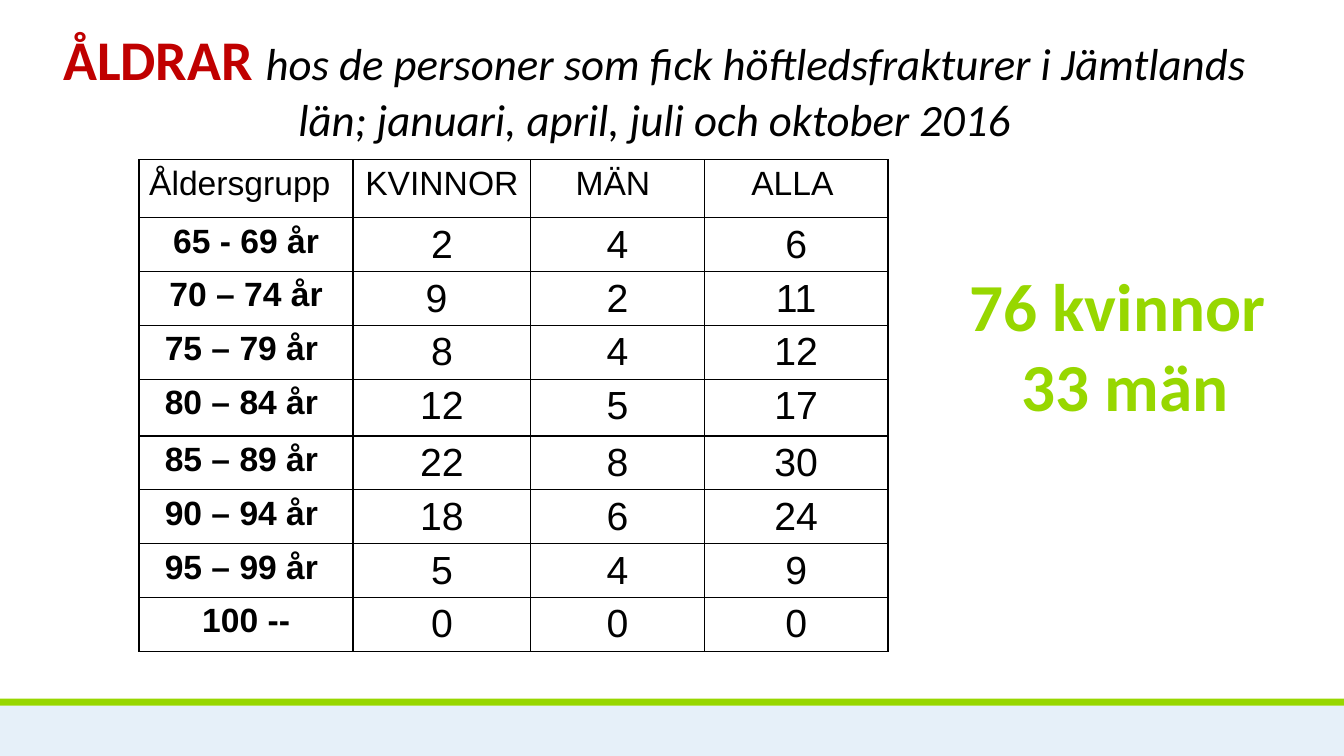
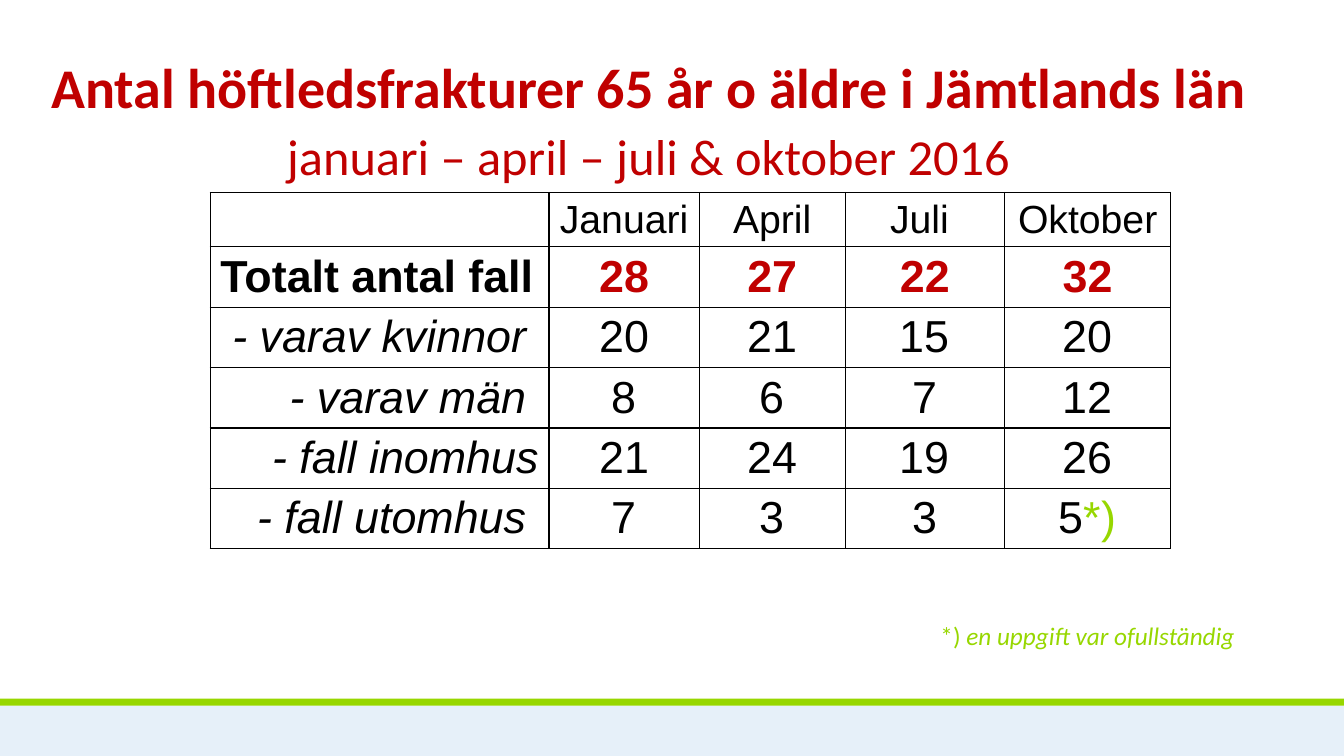
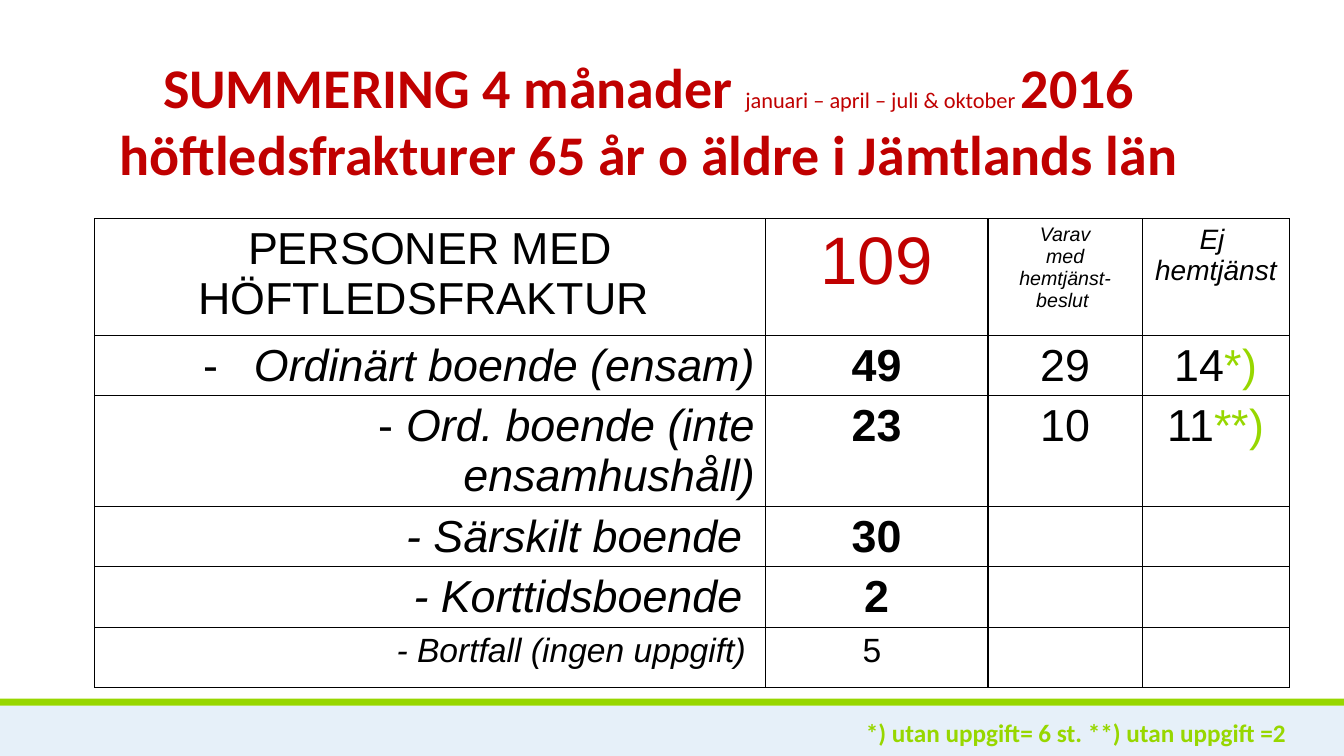
from dataclasses import dataclass, field

from lxml import etree
from pptx import Presentation
from pptx.dml.color import RGBColor
from pptx.enum.shapes import MSO_SHAPE as Shape
from pptx.enum.text import MSO_ANCHOR as Anchor, MSO_AUTO_SIZE as AutoSize, PP_ALIGN as Align
from pptx.oxml.ns import qn
from pptx.util import Inches, Pt


@dataclass(frozen=True)
class Theme:
    black: str = "000000"
    red: str = "C00000"
    green: str = "97D700"
    pale: str = "E6F0F9"
    title_font: str = "Calibri"
    table_font: str = "Arial"
    huge: int = 48
    title: int = 40
    subtitle: int = 36
    large: int = 32
    medium: int = 28
    small: int = 24
    label: int = 20
    note: int = 18
    minor: int = 16
    tiny: int = 14
    border: float = 1


T = Theme()
WIDTH, HEIGHT = Inches(13.33), Inches(7.5)


@dataclass
class Cell:
    paragraphs: tuple = ()
    align: Align = Align.CENTER
    bullet: bool = False
    fmt: dict = field(default_factory=dict)


def cell(*paragraphs, align=Align.CENTER, bullet=False, **fmt):
    return Cell(paragraphs, align, bullet, fmt)


def place(left, top, width, height):
    """Turn percentages of the slide into lengths."""
    return (int(WIDTH * left / 100), int(HEIGHT * top / 100),
            int(WIDTH * width / 100), int(HEIGHT * height / 100))


# Text
def write(p, text, size=T.note, color=T.black, bold=False, italic=False, font=T.title_font):
    r = p.add_run()
    r.text = text
    r.font.name, r.font.size = font, Pt(size)
    r.font.bold, r.font.italic = bold, italic
    r.font.color.rgb = RGBColor.from_string(color)


def write_all(tf, paragraphs, align, **base):
    """A paragraph is a text or a list of runs; a run is a text or (text, format)."""
    for i, runs in enumerate(paragraphs):
        p = tf.paragraphs[0] if i == 0 else tf.add_paragraph()
        p.alignment = align
        for run in [runs] if isinstance(runs, str) else runs:
            text, fmt = (run, {}) if isinstance(run, str) else run
            write(p, text, **{**base, **fmt})


def add_dash_bullet(p):
    pPr = p._p.get_or_add_pPr()
    pPr.set("marL", str(Inches(0.5)))
    pPr.set("indent", str(-Inches(0.5)))
    color = etree.SubElement(pPr, qn("a:buClr"))
    etree.SubElement(color, qn("a:srgbClr"), val=T.black)
    etree.SubElement(pPr, qn("a:buFont"), typeface=T.table_font)
    etree.SubElement(pPr, qn("a:buChar"), char="-")


# Parts of a slide
def add_bands(slide, layout):
    """Draw the footer bands and move them to the shared layout."""
    bands = ((place(0, 93.33, 100, 6.67), T.pale), (place(0, 92.4, 100, 0.93), T.green))
    for i, (box, color) in enumerate(bands):
        sp = slide.shapes.add_shape(Shape.RECTANGLE, *box)
        sp.shadow.inherit = False
        sp.fill.solid()
        sp.fill.fore_color.rgb = RGBColor.from_string(color)
        sp.line.fill.background()
        sp.element.nvSpPr.cNvPr.set("id", str(100 + i))
        layout.shapes.element.insert(2 + i, sp.element)


def add_title(slide, paragraphs, top=6.27):
    sp = slide.shapes.title
    sp.left, sp.top, sp.width, sp.height = place(1.58, top, 94.3, 19.33)
    tf = sp.text_frame
    tf.word_wrap, tf.auto_size, tf.vertical_anchor = True, AutoSize.NONE, Anchor.TOP
    write_all(tf, paragraphs, Align.CENTER, size=T.title, color=T.red, bold=True)


def add_note(slide, box, paragraphs, align=Align.LEFT, **fmt):
    tf = slide.shapes.add_textbox(*box).text_frame
    tf.word_wrap = True
    write_all(tf, paragraphs, align, color=T.green, **fmt)


def draw_borders(tc):
    tcPr = tc._tc.get_or_add_tcPr()
    for i, side in enumerate(("a:lnL", "a:lnR", "a:lnT", "a:lnB")):
        ln = etree.Element(qn(side), w=str(Pt(T.border)))
        fill = etree.SubElement(ln, qn("a:solidFill"))
        etree.SubElement(fill, qn("a:srgbClr"), val=T.black)
        tcPr.insert(i, ln)


def add_grid(slide, box, columns, rows, cells, size):
    """Share the box among the columns and rows by weight, then fill the cells."""
    table = slide.shapes.add_table(len(rows), len(columns), *box).table
    table.first_row = table.horz_banding = False
    for tracks, weights, name, total in ((table.columns, columns, "width", box[2]),
                                         (table.rows, rows, "height", box[3])):
        for track, weight in zip(tracks, weights):
            setattr(track, name, int(total * weight / sum(weights)))
    for r, line in enumerate(cells):
        for c, content in enumerate(line):
            tc = table.cell(r, c)
            tc.fill.background()
            draw_borders(tc)
            if content.bullet:
                add_dash_bullet(tc.text_frame.paragraphs[0])
            write_all(tc.text_frame, content.paragraphs, content.align,
                      **{"size": size, "font": T.table_font, **content.fmt})


# Slides
def build_ages(slide):
    add_title(slide, [["ÅLDRAR ", (
        "hos de personer som fick höftledsfrakturer i Jämtlands län; "
        "januari, april, juli och oktober 2016",
        dict(size=T.large, color=T.black, bold=False, italic=True))]], top=2.53)
    ages = (("65 - 69 år", "2", "4", "6"),
            ("70 – 74 år", "9 ", "2", "11"),
            ("75 – 79 år ", "8", "4", "12"),
            ("80 – 84 år ", "12", "5", "17"),
            ("85 – 89 år ", "22", "8", "30"),
            ("90 – 94 år ", "18", "6", "24"),
            ("95 – 99 år ", "5", "4", "9"),
            ("100 --", "0", "0", "0"))
    header = [cell("Åldersgrupp", align=Align.LEFT, size=T.small)]
    header += [cell(name, size=T.small) for name in ("KVINNOR ", "MÄN ", "ALLA ")]
    body = [[cell(age, size=T.small, bold=True), *map(cell, counts)] for age, *counts in ages]
    add_grid(slide, place(10.35, 21.15, 55.73, 64.95), (2.12, 1.76, 1.72, 1.82),
             (0.57, 0.53, 0.53, 0.53, 0.56, 0.53, 0.53, 0.53, 0.53), [header, *body], T.medium)
    add_note(slide, place(71.27, 34.27, 24.9, 22.93), ["76 kvinnor ", "33 män"],
             Align.CENTER, size=T.huge, bold=True)


def build_months(slide):
    add_title(slide, ["Antal höftledsfrakturer 65 år o äldre i Jämtlands län ",
                      [("januari – april – juli & oktober 2016",
                        dict(size=T.subtitle, bold=False)), " "]])
    header = [cell()] + [cell(month, size=T.medium)
                         for month in ("Januari ", "April", "Juli ", "Oktober ")]
    total = [cell("Totalt antal fall", align=Align.LEFT, bold=True)]
    total += [cell(n, color=T.red, bold=True) for n in ("28", "27", "22", "32")]
    parts = (("- varav kvinnor ", "20", "21", "15", "20"),
             ("- varav män ", "8", "6", "7", "12"),
             ("- fall inomhus", "21", "24", "19", "26"),
             ("- fall utomhus ", "7", "3", "3", ["5", ("*)", dict(color=T.green))]))
    body = [[cell(name, align=Align.RIGHT, italic=True), *map(cell, counts)]
            for name, *counts in parts]
    add_grid(slide, place(15.65, 25.47, 71.47, 47.1), (3.36, 1.49, 1.45, 1.58, 1.65),
             (0.54, 0.6, 0.6, 0.6, 0.6, 0.6), [header, total, *body], T.large)
    add_note(slide, place(69.24, 81.33, 24.53, 5.33),
             [["*) ", ("en uppgift var ofullständig", dict(italic=True))]])


def build_summary(slide):
    add_title(slide, [["SUMMERING 4 månader ",
                       ("januari – april – juli & oktober ", dict(size=T.minor, bold=False)),
                       "2016 "],
                      "höftledsfrakturer 65 år o äldre i Jämtlands län "])
    mark = dict(color=T.green, italic=True)
    header = [cell("PERSONER MED HÖFTLEDSFRAKTUR "),
              cell("109", size=T.huge, color=T.red),
              cell("Varav", "med hemtjänst-beslut ", size=T.tiny, italic=True),
              cell("Ej ", "hemtjänst ", size=T.label, italic=True)]
    homes = dict(align=Align.RIGHT, italic=True)
    body = [
        [cell("Ordinärt boende (ensam)", bullet=True, **homes), cell("49", bold=True),
         cell("29"), cell(["14", ("*)", dict(color=T.green))])],
        [cell([("- ", dict(italic=False)), "Ord. boende (inte ensamhushåll)"], **homes),
         cell("23", bold=True), cell("10"), cell(["11", ("**)", dict(color=T.green))])],
        [cell("- Särskilt boende ", **homes), cell("30", bold=True), cell(), cell()],
        [cell("- Korttidsboende ", **homes), cell("2", bold=True), cell(), cell()],
        [cell("- Bortfall (ingen uppgift) ", size=T.small, **homes),
         cell("5 ", size=T.small), cell(), cell()],
    ]
    add_grid(slide, place(7.05, 28.93, 88.9, 62.04), (6.65, 2.21, 1.53, 1.46),
             (1.16, 0.6, 1.1, 0.6, 0.6, 0.6), [header, *body], T.large)
    add_note(slide, place(63.69, 94.27, 33.23, 5.33),
             ["*) utan uppgift= 6 st. **) utan uppgift =2"], bold=True)


def main():
    prs = Presentation()
    prs.slide_width, prs.slide_height = WIDTH, HEIGHT
    layout = prs.slide_layouts[5]
    for i, build in enumerate((build_ages, build_months, build_summary)):
        slide = prs.slides.add_slide(layout)
        if i == 0:
            add_bands(slide, layout)
        build(slide)
    prs.save("out.pptx")


if __name__ == "__main__":
    main()
